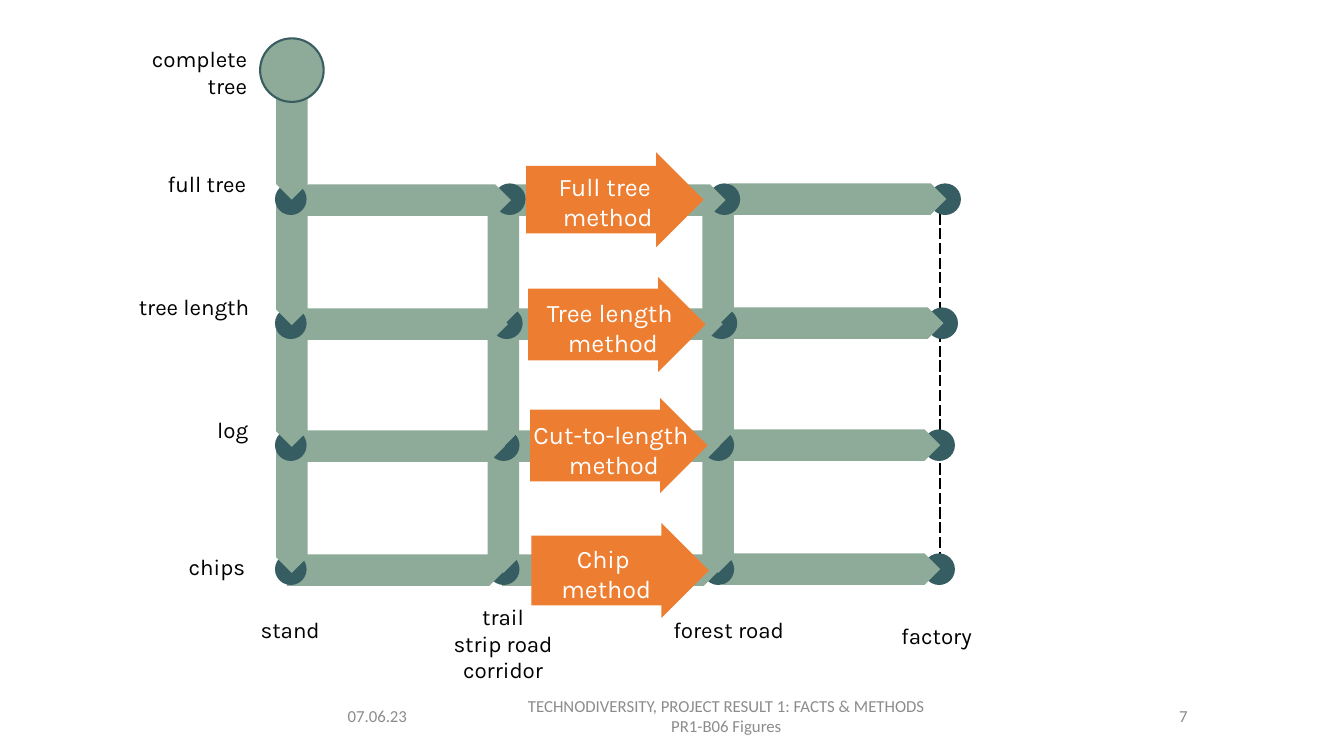
from dataclasses import dataclass
from typing import Any, NamedTuple, Optional

from lxml.etree import SubElement
from pptx import Presentation
from pptx.dml.color import RGBColor as Rgb
from pptx.enum.shapes import MSO_SHAPE as Preset
from pptx.enum.text import MSO_ANCHOR as Anchor
from pptx.enum.text import MSO_AUTO_SIZE as AutoSize
from pptx.enum.text import PP_ALIGN as Align
from pptx.oxml.ns import qn
from pptx.util import Pt


@dataclass(frozen=True)
class Theme:
    sage: Rgb = Rgb(0x8E, 0xAB, 0x99)
    teal: Rgb = Rgb(0x35, 0x5D, 0x62)
    rim: Rgb = Rgb(0x39, 0x5D, 0x61)
    orange: Rgb = Rgb(0xED, 0x7D, 0x31)
    black: Rgb = Rgb(0, 0, 0)
    white: Rgb = Rgb(255, 255, 255)
    grey: Rgb = Rgb(0x8C, 0x8C, 0x8C)
    body_font: str = "Karla"
    footer_font: str = "Calibri"
    label_size: float = 16
    method_size: float = 18
    footer_size: float = 12


class Box(NamedTuple):
    left: float
    top: float
    width: float
    height: float


class State(NamedTuple):
    dot_top: float
    shift: float
    drop_middle: float


class Station(NamedTuple):
    dot_left: float
    drop_center: Optional[float]
    track_left: Optional[float]
    track_drop: float


class Method(NamedTuple):
    name: str
    arrow_x: float
    arrow_y: float
    shaft: float
    text_box: Box


class Style(NamedTuple):
    font: str
    size: float
    color: Rgb
    align: Align
    anchor: Anchor = Anchor.TOP
    wrap: bool = True
    fit: AutoSize = AutoSize.SHAPE_TO_FIT_TEXT


class Label(NamedTuple):
    text: str
    box: Box
    style: Style


THEME = Theme()
DOT, THICK, TRACK, DROP = 22.6, 22.5, 155.5, 88.5
ARROW_WIDTH, ARROW_LENGTH = 67.7, 126.8

STATES = [
    State(131, 4.3, 98.3),
    State(219.6, 2.2, 188),
    State(306.7, 0, 275),
    State(395.3, 0, 365),
]
STATIONS = [
    Station(196.4, 208.4, 205.2, 0.7),
    Station(348.5, 359.6, 358.5, 0.7),
    Station(501.8, 513, 516.2, 0),
    Station(659.5, None, None, 0),
]
METHODS = [
    Method("Full tree ", 439.2, 142.6, 0.713, Box(390.2, 118.8, 87.8, 51)),
    Method("Tree length ", 440.6, 231.8, 0.756, Box(381.6, 208.8, 112.3, 51)),
    Method("Cut-to-length ", 442, 318.2, 0.756, Box(373, 296, 131, 51)),
    Method("Chip ", 442.9, 407.5, 0.735, Box(393.8, 384.5, 78.5, 51)),
]

STATION_STYLE = Style(THEME.body_font, THEME.label_size, THEME.black, Align.CENTER)
STATE_STYLE = STATION_STYLE._replace(align=Align.RIGHT)
METHOD_STYLE = Style(THEME.body_font, THEME.method_size, THEME.white,
                     Align.CENTER, wrap=False)
FOOTER_STYLE = Style(THEME.footer_font, THEME.footer_size, THEME.grey,
                     Align.CENTER, Anchor.MIDDLE, fit=AutoSize.NONE)

LABELS = [
    Label("07.06.23", Box(241.2, 496.8, 96.5, 28.8), FOOTER_STYLE._replace(align=Align.LEFT)),
    Label("TECHNODIVERSITY, PROJECT RESULT 1: FACTS & METHODS\nPR1-B06 Figures",
          Box(350, 496.8, 337.7, 28.8), FOOTER_STYLE),
    Label("7", Box(703.4, 496.8, 152, 28.8), FOOTER_STYLE._replace(align=Align.RIGHT)),
    Label("stand", Box(145.4, 436.3, 123.8, 26.6), STATION_STYLE),
    Label("trail\nstrip road\ncorridor", Box(297.4, 427, 123.8, 65.5), STATION_STYLE),
    Label("forest road", Box(458.6, 436.3, 123.8, 26.6), STATION_STYLE),
    Label("factory", Box(607, 440.6, 123.8, 26.6), STATION_STYLE),
    Label("complete tree", Box(93.6, 28.8, 90, 46), STATE_STYLE),
    Label("full tree", Box(71.3, 118, 111.6, 26.6), STATE_STYLE),
    Label("tree length", Box(78.5, 206, 106.6, 26.6), STATE_STYLE),
    Label("log", Box(101.5, 293.8, 82.8, 26.6), STATE_STYLE),
    Label("chips", Box(99.4, 391.7, 82.8, 26.6), STATE_STYLE),
]


def apply_format(target: Any, values: dict[str, Any]) -> None:
    for name, value in values.items():
        setattr(target, name, value)


def points(box: Box) -> list[Pt]:
    return [Pt(length) for length in box]


def centered(x: float, y: float, width: float, height: float) -> Box:
    return Box(x - width / 2, y - height / 2, width, height)


def add_figure(slide: Any, preset: Preset, box: Box, fill: Rgb, rotation: float = 0) -> Any:
    figure = slide.shapes.add_shape(preset, *points(box))
    figure.rotation = rotation
    figure.shadow.inherit = False
    figure.fill.solid()
    figure.fill.fore_color.rgb = fill
    figure.line.fill.background()
    return figure


def add_label(slide: Any, label: Label) -> None:
    style = label.style
    frame = slide.shapes.add_textbox(*points(label.box)).text_frame
    frame.text = label.text
    apply_format(frame, {"word_wrap": style.wrap, "auto_size": style.fit,
                         "vertical_anchor": style.anchor})
    for paragraph in frame.paragraphs:
        paragraph.alignment = style.align
        apply_format(paragraph.font, {"name": style.font, "size": Pt(style.size)})
        paragraph.font.color.rgb = style.color


def add_dashed_border(cell: Any, side: str) -> None:
    border = SubElement(cell._tc.get_or_add_tcPr(), qn(f"a:ln{side}"), w=str(Pt(1)))
    color = SubElement(border, qn("a:solidFill"))
    SubElement(color, qn("a:srgbClr"), val=str(THEME.black))
    SubElement(border, qn("a:prstDash"), val="dash")


def add_grid(slide: Any) -> None:
    grid = slide.shapes.add_table(4, 3, *points(Box(205.2, 53.3, 466.2, 356.4))).table
    apply_format(grid, {"first_row": False, "horz_banding": False})
    for row in range(4):
        for column in range(3):
            cell = grid.cell(row, column)
            sides = "LRTB" if row else "LB" if column == 0 else "B"
            for side in sides:
                add_dashed_border(cell, side)
            cell.fill.background()


def add_dot(slide: Any, station: Station, state: State) -> None:
    shift = 0 if station is STATIONS[0] else state.shift
    add_figure(slide, Preset.OVAL,
               Box(station.dot_left + shift, state.dot_top, DOT, DOT), THEME.teal)


def add_drop(slide: Any, station: Station, state: State) -> None:
    if station.drop_center is not None:
        add_figure(slide, Preset.PENTAGON,
                   centered(station.drop_center, state.drop_middle, DROP, THICK),
                   THEME.sage, 90)


def add_track(slide: Any, station: Station, state: State) -> None:
    add_figure(slide, Preset.PENTAGON,
               Box(station.track_left + state.shift, state.dot_top + station.track_drop,
                   TRACK, THICK), THEME.sage)


def add_network(slide: Any) -> None:
    full_tree, *later_states = STATES
    for index, station in reversed(list(enumerate(STATIONS))):
        feeder = STATIONS[index - 1] if index else None
        for state in reversed(later_states):
            add_dot(slide, station, state)
            add_drop(slide, station, state)
        if feeder:
            for state in reversed(later_states):
                add_track(slide, feeder, state)
        add_dot(slide, station, full_tree)
        if feeder:
            add_track(slide, feeder, full_tree)
    add_drop(slide, STATIONS[0], full_tree)
    complete_tree = add_figure(slide, Preset.OVAL, Box(185.8, 27.4, 45.4, 45.4), THEME.sage)
    complete_tree.line.color.rgb = THEME.rim
    complete_tree.line.width = Pt(1.5)


def add_methods(slide: Any) -> None:
    for method in METHODS:
        arrow = add_figure(slide, Preset.DOWN_ARROW,
                           centered(method.arrow_x, method.arrow_y, ARROW_WIDTH, ARROW_LENGTH),
                           THEME.orange, 270)
        arrow.adjustments[0] = method.shaft
        arrow.adjustments[1] = 0.5
    for method in METHODS:
        add_label(slide, Label(f"{method.name}\nmethod", method.text_box, METHOD_STYLE))


def main() -> None:
    deck = Presentation()
    apply_format(deck, {"slide_width": Pt(960), "slide_height": Pt(540)})
    slide = deck.slides.add_slide(deck.slide_layouts[6])
    add_grid(slide)
    add_network(slide)
    for label in LABELS:
        add_label(slide, label)
    add_methods(slide)
    deck.save("out.pptx")


if __name__ == "__main__":
    main()
